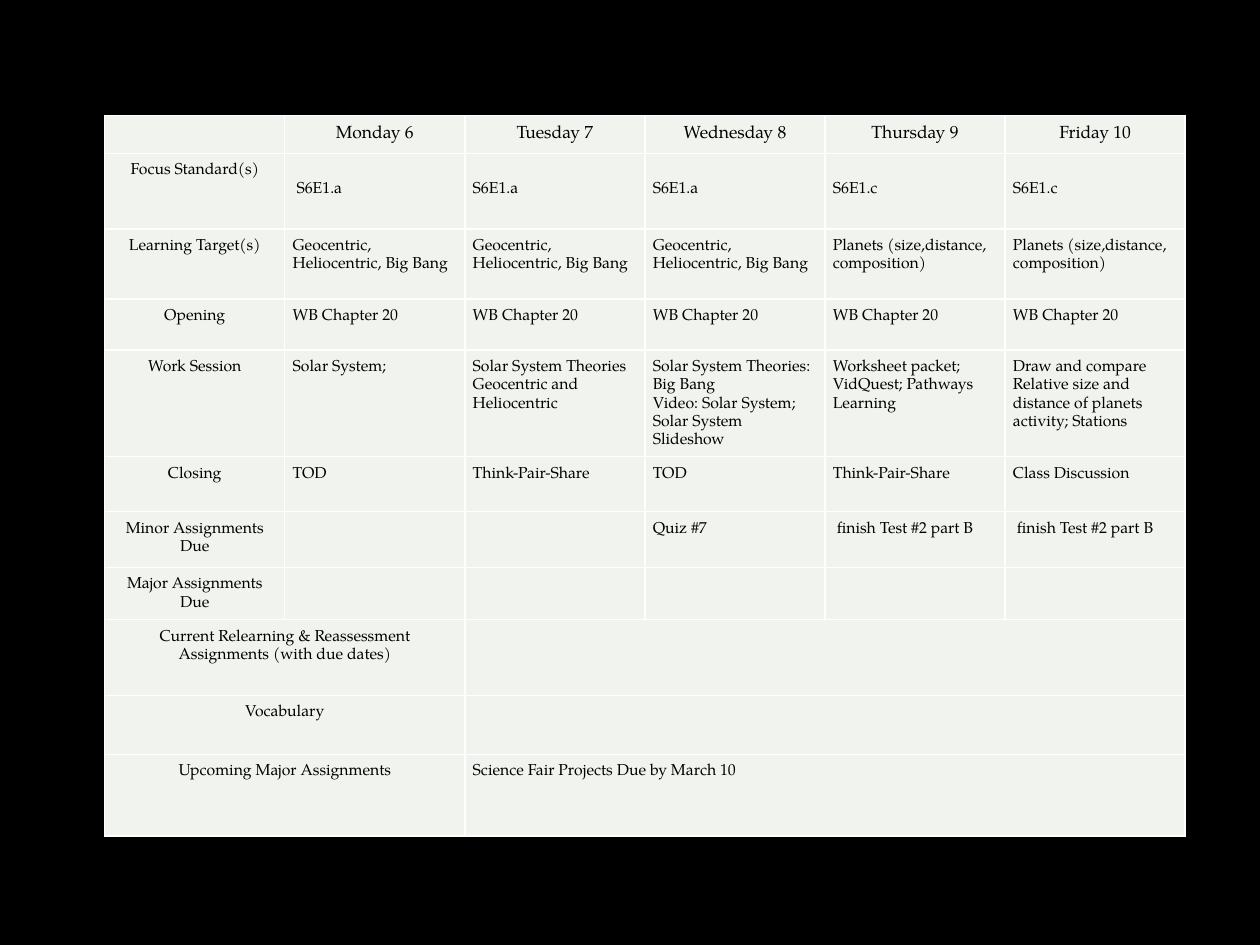
from lxml.etree import SubElement
from pptx import Presentation
from pptx.dml.color import RGBColor
from pptx.enum.text import PP_ALIGN
from pptx.oxml.ns import qn
from pptx.util import Cm, Pt

BLACK = RGBColor(0x00, 0x00, 0x00)
WHITE = RGBColor(0xFF, 0xFF, 0xFF)
PALE = RGBColor(0xF0, 0xF3, 0xEE)
FONT = "TeX Gyre Pagella"
PAD = Cm(0.16)
LOW_PAD = Cm(0.54)  # top margin of the focus standards

COL = 3.63
HEIGHTS = [0.76, 1.53, 1.41, 1.03, 2.13, 1.11, 1.12, 1.03, 1.53, 1.19, 1.65]

GEO = "Geocentric, Heliocentric, Big Bang"
PLANETS = "Planets (size,distance, composition)"
TEST = " finish Test #2 part B"

# One row per heading, one column per weekday
WEEK = [
    ["", "Monday 6", "Tuesday 7", "Wednesday 8", "Thursday 9", "Friday 10"],
    ["Focus Standard(s)", " S6E1.a", "S6E1.a", "S6E1.a", "S6E1.c", "S6E1.c"],
    ["Learning Target(s)", GEO, GEO, GEO, PLANETS, PLANETS],
    ["Opening"] + ["WB Chapter 20"] * 5,
    ["Work Session",
     "Solar System;",
     "Solar System Theories\nGeocentric and Heliocentric",
     "Solar System Theories: Big Bang\nVideo: Solar System;\n"
     "Solar System Slideshow",
     "Worksheet packet; VidQuest; Pathways Learning",
     "Draw and compare Relative size and distance of planets activity; "
     "Stations"],
    ["Closing", "TOD", "Think-Pair-Share", "TOD", "Think-Pair-Share",
     "Class Discussion"],
    ["Minor Assignments Due", "", "", "Quiz #7", TEST, TEST],
    ["Major Assignments Due"] + [""] * 5,
]

# Rows of two merged cells: heading and content
NOTES = [
    ["Current Relearning & Reassessment Assignments (with due dates)", ""],
    ["Vocabulary", ""],
    ["Upcoming Major Assignments", "Science Fair Projects Due by March 10"],
]


def add_edges(cell):
    """Draw a thin white line on each side of a cell."""
    props = cell._tc.get_or_add_tcPr()
    for side in ("lnL", "lnR", "lnT", "lnB"):
        line = SubElement(props, qn(f"a:{side}"), w=str(Pt(1)))
        fill = SubElement(line, qn("a:solidFill"))
        SubElement(fill, qn("a:srgbClr"), val=str(WHITE))


def style_cell(cell):
    add_edges(cell)
    cell.fill.solid()
    cell.fill.fore_color.rgb = PALE
    cell.margin_left = cell.margin_right = PAD
    cell.margin_top = cell.margin_bottom = PAD


def write_cell(cell, text, size, center):
    cell.text_frame.text = text
    for para in cell.text_frame.paragraphs:
        para.line_spacing = 1.15
        para.alignment = PP_ALIGN.CENTER if center else PP_ALIGN.LEFT
        for run in para.runs:
            run.font.name = FONT
            run.font.size = Pt(size)
            run.font.color.rgb = BLACK
        if not text:  # keeps an empty cell from stretching its row
            SubElement(para._p, qn("a:endParaRPr"), sz=str(size * 100))


def add_grid(slide):
    """Add the styled, empty table."""
    frame = slide.shapes.add_table(
        len(HEIGHTS), 6, Cm(2.11), Cm(2.33), Cm(6 * COL), Cm(sum(HEIGHTS)))
    table = frame.table
    table.first_row = table.horz_banding = False
    for col in table.columns:
        col.width = Cm(COL)
    for row, height in zip(table.rows, HEIGHTS):
        row.height = Cm(height)
    for cell in table.iter_cells():
        style_cell(cell)
    return table


def fill_week(table):
    for r, row in enumerate(WEEK):
        for c, text in enumerate(row):
            size = 10 if r == 0 else 9
            write_cell(table.cell(r, c), text, size, r == 0 or c == 0)
    for c in range(1, 6):
        table.cell(1, c).margin_top = LOW_PAD


def fill_notes(table):
    for r, (label, text) in enumerate(NOTES, len(WEEK)):
        table.cell(r, 0).merge(table.cell(r, 1))
        table.cell(r, 2).merge(table.cell(r, 5))
        write_cell(table.cell(r, 0), label, 9, True)
        write_cell(table.cell(r, 2), text, 9, False)


def main():
    deck = Presentation()
    deck.slide_width, deck.slide_height = Cm(25.4), Cm(19.05)
    slide = deck.slides.add_slide(deck.slide_layouts[6])
    slide.background.fill.solid()
    slide.background.fill.fore_color.rgb = BLACK

    # Weekly plan
    table = add_grid(slide)
    fill_week(table)
    fill_notes(table)
    deck.save("out.pptx")


if __name__ == "__main__":
    main()
